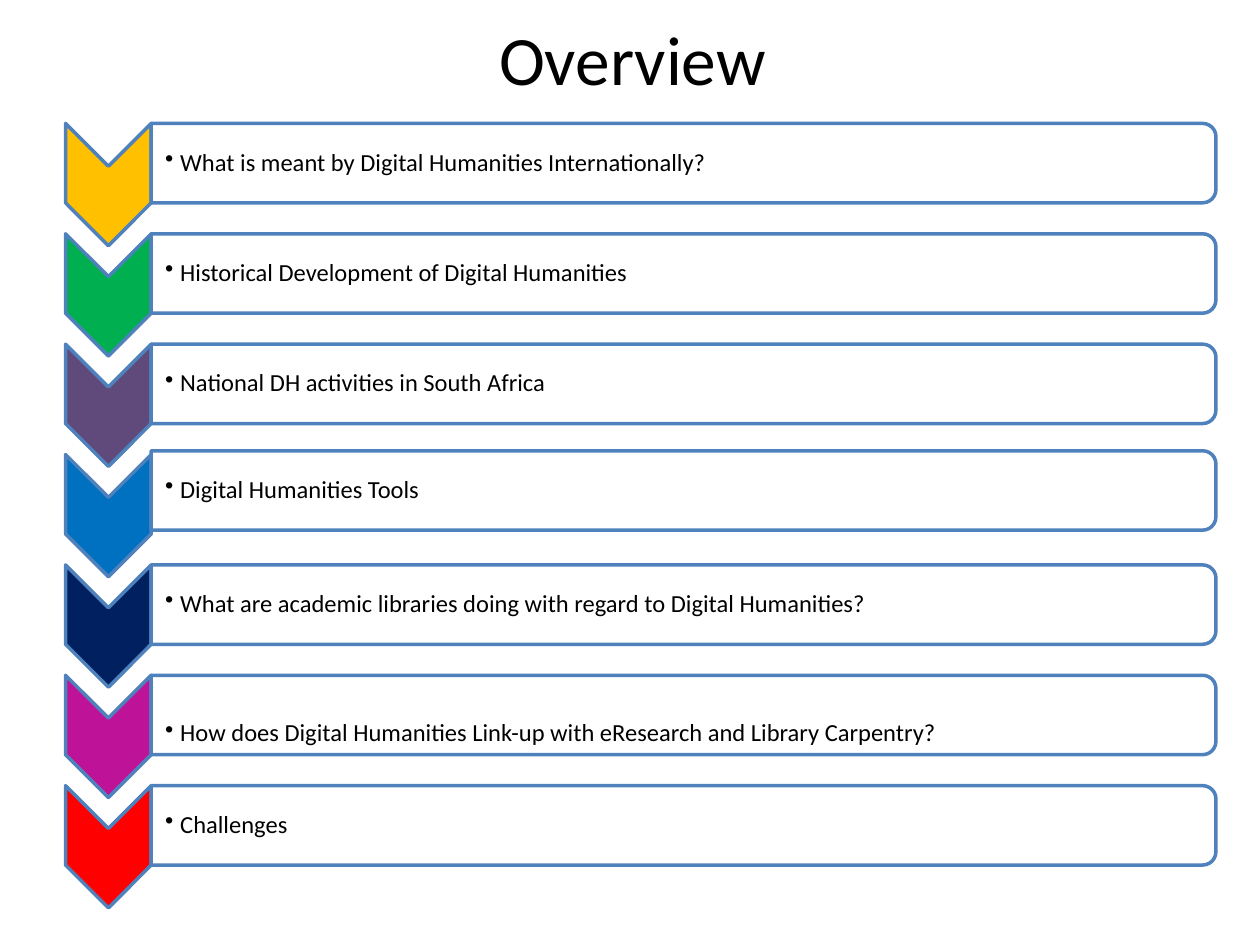
import pptx
import pptx.dml.color
import pptx.enum.shapes
import pptx.enum.text
import pptx.oxml.ns
import pptx.util
from lxml import etree
from pptx.util import Inches

COLORS = {
    "text": "000000",
    "outline": "4F81BD",
    "bar": "FFFFFF",
    "gold": "FFC000",
    "green": "00B050",
    "purple": "604A7B",
    "blue": "0070C0",
    "navy": "002060",
    "magenta": "BE1299",
    "red": "FF0000",
}
FONT = "Calibri"

# Topic, chevron colour, shift of the bar, shift of the text within the bar
TOPICS = [
    ("What is meant by Digital Humanities Internationally?", "gold", 0, 0),
    ("Historical Development of Digital Humanities", "green", 0, 0),
    ("National DH activities in South Africa", "purple", 0, 0),
    ("Digital Humanities Tools", "blue", -0.03, 0),
    ("What are academic libraries doing with regard to Digital Humanities?", "navy", 0, 0),
    ("How does Digital Humanities Link-up with eResearch and Library Carpentry?",
     "magenta", 0, 0.15),
    ("Challenges", "red", 0, 0),
]
ROW_PITCH = Inches(0.876)
CHEVRON_WIDTH, CHEVRON_HEIGHT = Inches(0.68), Inches(0.97)
BAR_HEIGHT = Inches(0.63)


def rgb(name):
    return pptx.dml.color.RGBColor.from_string(COLORS[name])


def format_font(font, size):
    font.name = FONT
    font.size = pptx.util.Pt(size)
    font.color.rgb = rgb("text")


def add_turned_shape(slide, kind, left, top, width, height, fill):
    """Add a shape turned by 90 degrees that covers the given box."""
    shape = slide.shapes.add_shape(
        kind, left + (width - height) // 2, top + (height - width) // 2, height, width)
    shape.rotation = 90
    shape.shadow.inherit = False
    shape.fill.solid()
    shape.fill.fore_color.rgb = rgb(fill)
    shape.line.color.rgb = rgb("outline")
    shape.line.width = pptx.util.Pt(2)
    return shape


def add_bullet_text(slide, left, top, width, height, text):
    box = slide.shapes.add_textbox(left, top, width, height)
    frame = box.text_frame
    frame.word_wrap = True
    frame.vertical_anchor = pptx.enum.text.MSO_ANCHOR.MIDDLE
    frame.margin_left = Inches(0.11)
    frame.margin_top = frame.margin_right = frame.margin_bottom = Inches(0.01)
    paragraph = frame.paragraphs[0]
    paragraph.text = text
    paragraph.line_spacing = 0.9
    properties = paragraph._p.get_or_add_pPr()
    properties.set("marL", str(Inches(0.12)))
    properties.set("indent", str(-Inches(0.12)))
    bullet = etree.SubElement(properties, pptx.oxml.ns.qn("a:buChar"))
    bullet.set("char", "•")
    format_font(paragraph.runs[0].font, 14)


def add_title(slide, left, top, width, height):
    title = slide.shapes.title
    title.left, title.top, title.width, title.height = left, top, width, height
    title.text_frame.text = "Overview"
    title.text_frame.vertical_anchor = pptx.enum.text.MSO_ANCHOR.MIDDLE
    paragraph = title.text_frame.paragraphs[0]
    paragraph.alignment = pptx.enum.text.PP_ALIGN.CENTER
    format_font(paragraph.runs[0].font, 39.6)


def add_topic_row(slide, left, top, width, topic):
    text, color, bar_shift, text_shift = topic
    shapes = pptx.enum.shapes.MSO_SHAPE

    # Chevron pointing down
    add_turned_shape(slide, shapes.CHEVRON, left, top,
                     CHEVRON_WIDTH, CHEVRON_HEIGHT, color)

    # Bar rounded on its right side, slightly transparent
    bar_left, bar_top = left + CHEVRON_WIDTH, top + Inches(bar_shift)
    bar_width = width - CHEVRON_WIDTH
    bar = add_turned_shape(slide, shapes.ROUND_2_SAME_RECTANGLE, bar_left, bar_top,
                           bar_width, BAR_HEIGHT, "bar")
    fill_color = bar._element.spPr.find(".//" + pptx.oxml.ns.qn("a:srgbClr"))
    etree.SubElement(fill_color, pptx.oxml.ns.qn("a:alpha")).set("val", "90000")

    # Topic text
    inset = Inches(0.03)
    add_bullet_text(slide, bar_left, bar_top + inset + Inches(text_shift),
                    bar_width - inset, BAR_HEIGHT - 2 * inset, text)


def add_topic_list(slide, left, top, width):
    for row, topic in enumerate(TOPICS):
        add_topic_row(slide, left, top + row * ROW_PITCH, width, topic)


def main():
    presentation = pptx.Presentation()
    presentation.slide_width, presentation.slide_height = Inches(10), Inches(7.5)
    slide = presentation.slides.add_slide(presentation.slide_layouts[5])
    add_title(slide, Inches(0.52), Inches(0.15), Inches(9), Inches(0.61))
    add_topic_list(slide, Inches(0.52), Inches(0.98), Inches(9.13))
    presentation.save("out.pptx")


if __name__ == "__main__":
    main()
